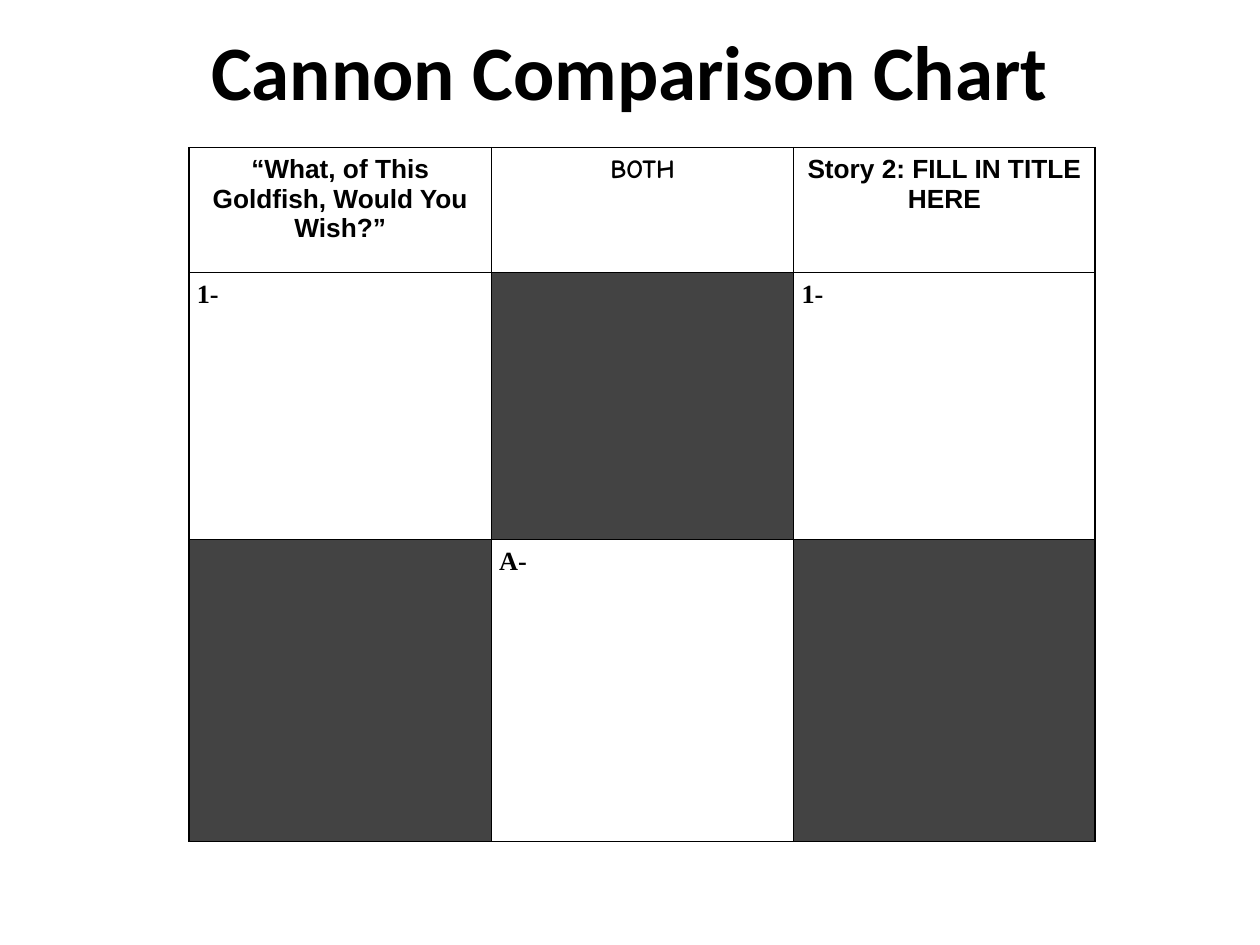
from dataclasses import dataclass

from lxml import etree
from pptx import Presentation
from pptx.dml.color import RGBColor
from pptx.enum.text import MSO_ANCHOR, PP_ALIGN
from pptx.oxml import parse_xml
from pptx.oxml.ns import nsdecls
from pptx.util import Pt


@dataclass(frozen=True)
class Theme:
    ink: str = "000000"
    blocked: str = "434343"
    title_font: str = "Calibri"
    heading_font: str = "Arial"
    both_font: str = "Comic Neue"
    entry_font: str = "Times New Roman"
    title_size: float = 44
    cell_size: float = 15
    border: float = 0.75
    cell_margin: float = 4.5


THEME = Theme()
COLUMN_WIDTHS = (172.8, 172.8, 172.1)
ROW_HEIGHTS = (71.3, 152.6, 172.8)
BLOCKED = None

# Each cell is (text, font, alignment), or BLOCKED for a dark cell
ROWS = (
    (
        ("“What, of This Goldfish, Would You Wish?”", THEME.heading_font, PP_ALIGN.CENTER),
        ("BOTH", THEME.both_font, PP_ALIGN.CENTER),
        ("Story 2: FILL IN TITLE HERE", THEME.heading_font, PP_ALIGN.CENTER),
    ),
    (
        ("1-", THEME.entry_font, PP_ALIGN.LEFT),
        BLOCKED,
        ("1-", THEME.entry_font, PP_ALIGN.LEFT),
    ),
    (
        BLOCKED,
        ("A-", THEME.entry_font, PP_ALIGN.LEFT),
        BLOCKED,
    ),
)


def write_bold(paragraph, text, font, size, alignment):
    paragraph.text = text
    paragraph.alignment = alignment
    paragraph.font.name = font
    paragraph.font.size = Pt(size)
    paragraph.font.bold = True
    paragraph.font.color.rgb = RGBColor.from_string(THEME.ink)


def add_borders(cell):
    properties = cell._tc.get_or_add_tcPr()
    for position, side in enumerate(("lnL", "lnR", "lnT", "lnB")):
        line = parse_xml(f'<a:{side} {nsdecls("a")} w="{Pt(THEME.border)}"/>')
        fill = etree.SubElement(line, line.tag.replace(side, "solidFill"))
        etree.SubElement(fill, line.tag.replace(side, "srgbClr"), val=THEME.ink)
        properties.insert(position, line)


def add_title(slide, left, top, width, height):
    title = slide.shapes.add_textbox(Pt(left), Pt(top), Pt(width), Pt(height)).text_frame
    title.word_wrap = True
    title.vertical_anchor = MSO_ANCHOR.MIDDLE
    write_bold(title.paragraphs[0], "Cannon Comparison Chart",
               THEME.title_font, THEME.title_size, PP_ALIGN.CENTER)


def fill_cell(cell, content):
    cell.margin_left = cell.margin_right = Pt(THEME.cell_margin)
    cell.margin_top = cell.margin_bottom = Pt(THEME.cell_margin)
    if content is BLOCKED:
        cell.fill.solid()
        cell.fill.fore_color.rgb = RGBColor.from_string(THEME.blocked)
    else:
        cell.fill.background()
        text, font, alignment = content
        write_bold(cell.text_frame.paragraphs[0], text, font, THEME.cell_size, alignment)
    add_borders(cell)


def add_comparison(slide, left, top):
    comparison = slide.shapes.add_table(
        len(ROWS), len(COLUMN_WIDTHS), Pt(left), Pt(top),
        Pt(sum(COLUMN_WIDTHS)), Pt(sum(ROW_HEIGHTS))).table
    comparison.first_row = False
    comparison.horz_banding = False
    for column, width in zip(comparison.columns, COLUMN_WIDTHS):
        column.width = Pt(width)
    for row, height, contents in zip(comparison.rows, ROW_HEIGHTS, ROWS):
        row.height = Pt(height)
        for cell, content in zip(row.cells, contents):
            fill_cell(cell, content)


def main():
    presentation = Presentation()
    presentation.slide_width, presentation.slide_height = Pt(720), Pt(540)
    slide = presentation.slides.add_slide(presentation.slide_layouts[6])
    add_title(slide, 36, 5.8, 648, 68.4)
    add_comparison(slide, 108, 84.2)
    presentation.save("out.pptx")


if __name__ == "__main__":
    main()
